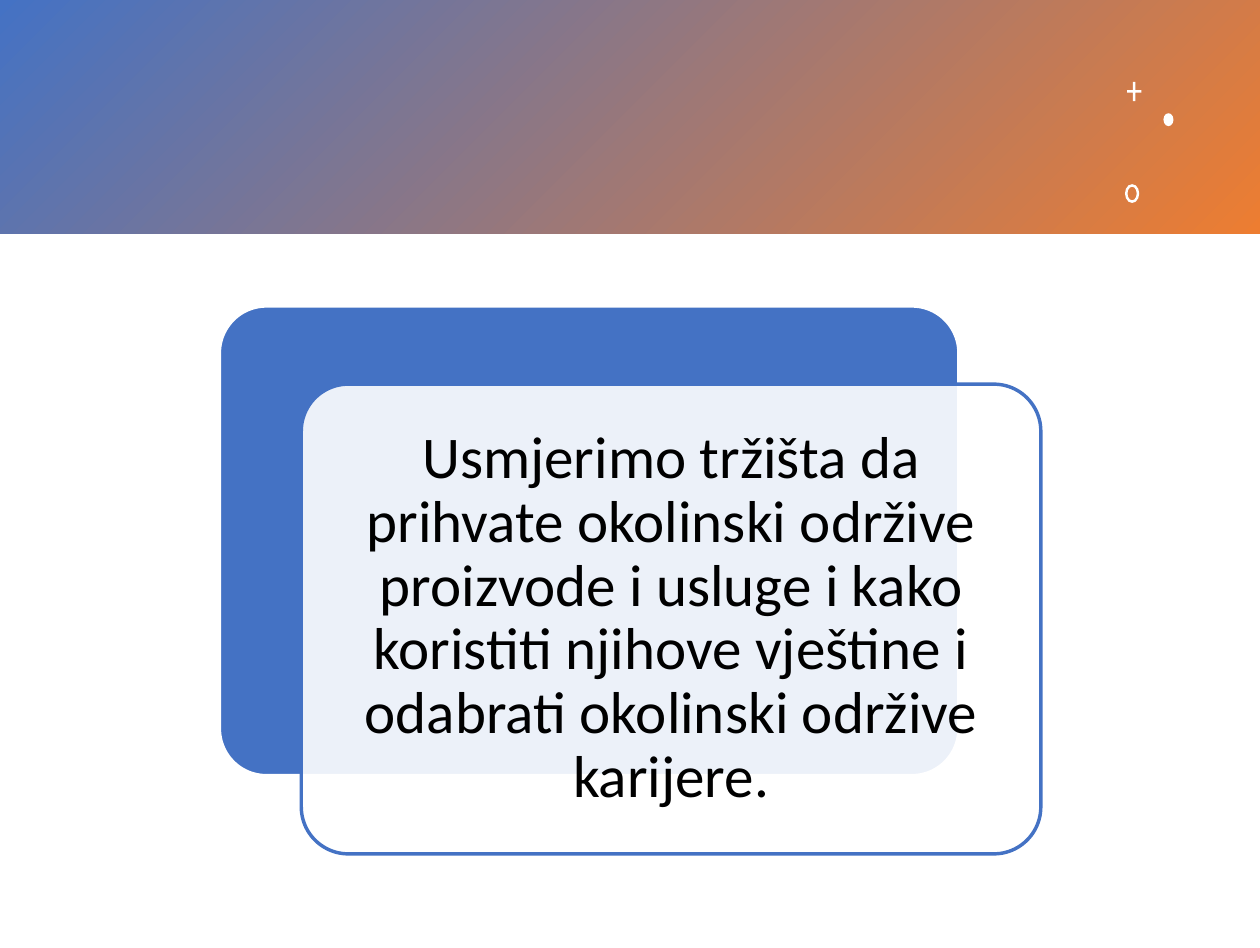
from dataclasses import dataclass

from lxml import etree
from pptx import Presentation
from pptx.dml.color import RGBColor
from pptx.enum.shapes import MSO_SHAPE
from pptx.enum.text import MSO_ANCHOR, PP_ALIGN
from pptx.oxml.ns import qn
from pptx.shapes.autoshape import Shape
from pptx.slide import Slide
from pptx.util import Pt

RECTANGLE = MSO_SHAPE.RECTANGLE
ROUNDED = MSO_SHAPE.ROUNDED_RECTANGLE
OVAL = MSO_SHAPE.OVAL
DONUT = MSO_SHAPE.DONUT
CENTER = PP_ALIGN.CENTER
MIDDLE = MSO_ANCHOR.MIDDLE

SLIDE_WIDTH, SLIDE_HEIGHT = 362.88, 272.88
BAND_HEIGHT = 67.4
BLUE, ORANGE, WHITE, BLACK = "4472C4", "ED7D31", "FFFFFF", "000000"
MESSAGE = (
    "Usmjerimo tržišta da prihvate okolinski održive proizvode i usluge "
    "i kako koristiti njihove vještine i odabrati okolinski održive karijere."
)


@dataclass(frozen=True)
class Block:
    kind: MSO_SHAPE
    left: float
    top: float
    width: float
    height: float
    fill: str
    line: str | None = None
    adjustment: float | None = None
    opacity: int = 100


CARD_WIDTH, CARD_HEIGHT = 213, 135.2
CARDS = [
    Block(ROUNDED, 63.2, 88.1, CARD_WIDTH, CARD_HEIGHT, BLUE, WHITE, 0.1),
    Block(ROUNDED, 86.8, 110.6, CARD_WIDTH, CARD_HEIGHT, WHITE, BLUE, 0.1, 90),
]
DOT = Block(OVAL, 335.1, 32.6, 2.9, 3.7, WHITE)
RING = Block(DONUT, 324, 53, 4.1, 5.4, WHITE, adjustment=0.18)


def color(value: str) -> RGBColor:
    return RGBColor.from_string(value)


def add_block(page: Slide, block: Block) -> Shape:
    shape = page.shapes.add_shape(
        block.kind, Pt(block.left), Pt(block.top), Pt(block.width), Pt(block.height)
    )
    shape.shadow.inherit = False
    shape.fill.solid()
    shape.fill.fore_color.rgb = color(block.fill)
    if block.opacity < 100:
        tint = shape.element.spPr.find(qn("a:solidFill"))[0]
        etree.SubElement(tint, qn("a:alpha"), val=str(block.opacity * 1000))
    if block.line:
        shape.line.color.rgb = color(block.line)
        shape.line.width = Pt(1)
    else:
        shape.line.fill.background()
    if block.adjustment is not None:
        shape.adjustments[0] = block.adjustment
    return shape


def add_band(page: Slide) -> None:
    band = add_block(page, Block(RECTANGLE, 0, 0, SLIDE_WIDTH, BAND_HEIGHT, BLUE))
    band.fill.gradient()
    band.fill.gradient_angle = 315
    for stop, tone in zip(band.fill.gradient_stops, (BLUE, ORANGE)):
        stop.color.rgb = color(tone)


def add_plus(
    page: Slide, left: float, top: float, width: float, height: float, bar: float
) -> None:
    x1, x2 = left + (width - bar) / 2, left + (width + bar) / 2
    y1, y2 = top + (height - bar) / 2, top + (height + bar) / 2
    right, bottom = left + width, top + height
    corners = [
        (x1, top), (x2, top), (x2, y1), (right, y1), (right, y2), (x2, y2),
        (x2, bottom), (x1, bottom), (x1, y2), (left, y2), (left, y1), (x1, y1),
    ]
    points = [(Pt(x), Pt(y)) for x, y in corners]
    builder = page.shapes.build_freeform(*points[0])
    builder.add_line_segments(points[1:])
    plus = builder.convert_to_shape()
    plus.shadow.inherit = False
    plus.fill.solid()
    plus.fill.fore_color.rgb = color(WHITE)
    plus.line.fill.background()


def add_text(
    page: Slide, text: str, *, left: float, top: float, width: float, height: float,
    size: float, font: str, tone: str, inset: float, spacing: float,
) -> None:
    box = page.shapes.add_textbox(Pt(left), Pt(top), Pt(width), Pt(height))
    frame = box.text_frame
    frame.word_wrap = True
    frame.vertical_anchor = MIDDLE
    frame.margin_left = frame.margin_right = Pt(inset)
    frame.margin_top = frame.margin_bottom = Pt(inset)
    para = frame.paragraphs[0]
    para.alignment = CENTER
    para.line_spacing = spacing
    span = para.add_run()
    span.text = text
    span.font.name = font
    span.font.size = Pt(size)
    span.font.color.rgb = color(tone)


def main() -> None:
    deck = Presentation()
    deck.slide_width, deck.slide_height = Pt(SLIDE_WIDTH), Pt(SLIDE_HEIGHT)
    page = deck.slides.add_slide(deck.slide_layouts[6])
    add_band(page)
    add_plus(page, 324.6, 23.6, 4.1, 5.5, bar=0.7)
    for block in (DOT, RING, *CARDS):
        add_block(page, block)
    add_text(
        page, MESSAGE, left=90.7, top=114.5, width=205.2, height=127.4,
        size=17, font="Calibri", tone=BLACK, inset=5, spacing=0.9,
    )
    deck.save("out.pptx")


if __name__ == "__main__":
    main()
